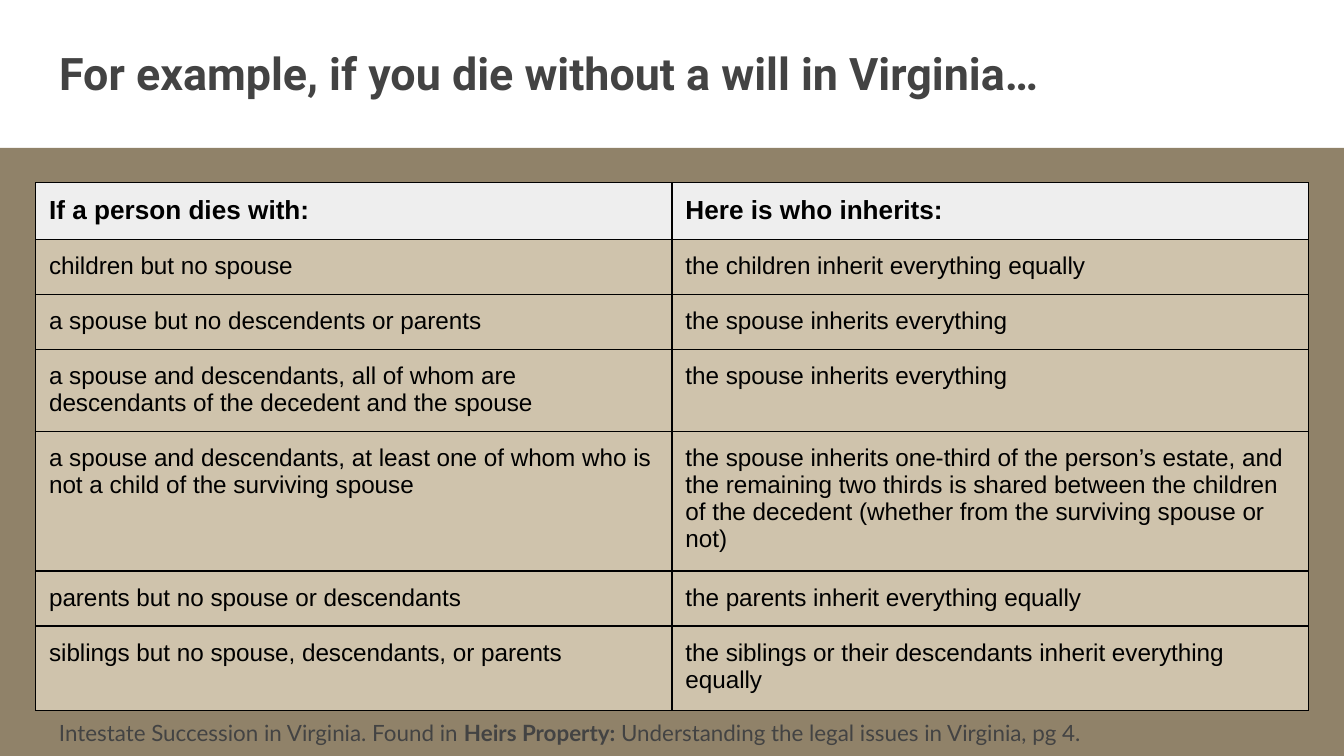
import pptx
import pptx.util
import pptx.dml.color
import pptx.enum.shapes
import pptx.enum.text
import pptx.oxml
import pptx.oxml.ns

WIDTH = 10
HEIGHT = WIDTH * 9 / 16
COLORS = {
    "band": "908269",
    "heading": "434343",
    "header": "EEEEEE",
    "body": "CFC3AC",
    "ink": "000000",
}
ROW_HEIGHTS = [0.42, 0.41, 0.41, 0.61, 1.04, 0.41, 0.63]
RULES = [
    ("If a person dies with:", "Here is who inherits:"),
    ("children but no spouse", "the children inherit everything equally"),
    ("a spouse but no descendents or parents", "the spouse inherits everything"),
    ("a spouse and descendants, all of whom are descendants of the decedent and the spouse",
     "the spouse inherits everything"),
    ("a spouse and descendants, at least one of whom who is not a child of the surviving spouse",
     "the spouse inherits one-third of the person’s estate, and the remaining two thirds is shared "
     "between the children of the decedent (whether from the surviving spouse or not)"),
    ("parents but no spouse or descendants", "the parents inherit everything equally"),
    ("siblings but no spouse, descendants, or parents",
     "the siblings or their descendants inherit everything equally"),
]
SOURCE = [
    ("Intestate Succession in Virginia. Found in ", False),
    ("Heirs Property: ", True),
    ("Understanding the legal issues in Virginia, pg 4.", False),
]


def rgb(name):
    return pptx.dml.color.RGBColor.from_string(COLORS[name])


def inches(box):
    return [pptx.util.Inches(v) for v in box]


def add_run(p, text, font, size, color, bold=False):
    r = p.add_run()
    r.text = text
    r.font.name = font
    r.font.size = pptx.util.Pt(size)
    r.font.bold = bold
    r.font.color.rgb = rgb(color)


def set_margins(frame):
    for side in ("left", "top", "right", "bottom"):
        setattr(frame, f"margin_{side}", pptx.util.Inches(0.1))


def set_frame(tf):
    set_margins(tf)
    tf.word_wrap = True
    tf.auto_size = pptx.enum.text.MSO_AUTO_SIZE.NONE
    tf.vertical_anchor = pptx.enum.text.MSO_ANCHOR.TOP
    p = tf.paragraphs[0]
    p.alignment = pptx.enum.text.PP_ALIGN.LEFT
    return p


def set_borders(cell):
    tc_pr = cell._tc.get_or_add_tcPr()
    for i, side in enumerate(("lnL", "lnR", "lnT", "lnB")):
        tc_pr.insert(i, pptx.oxml.parse_xml(
            f'<a:{side} {pptx.oxml.ns.nsdecls("a")} w="9525"><a:solidFill>'
            f'<a:srgbClr val="{COLORS["ink"]}"/></a:solidFill></a:{side}>'))


def add_band(s, box):
    sp = s.shapes.add_shape(pptx.enum.shapes.MSO_SHAPE.RECTANGLE, *inches(box))
    sp.shadow.inherit = False
    sp.fill.solid()
    sp.fill.fore_color.rgb = rgb("band")
    sp.line.fill.background()


def add_title(s, box):
    sp = s.shapes.title
    sp.left, sp.top, sp.width, sp.height = inches(box)
    p = set_frame(sp.text_frame)
    add_run(p, "For example, if you die without a will in Virginia…", "Roboto", 24, "heading", True)


def add_rules_table(s, box):
    table = s.shapes.add_table(len(RULES), 2, *inches(box)).table
    table.horz_banding = False
    for column in table.columns:
        column.width = pptx.util.Inches(box[2] / 2)
    for i, (texts, height) in enumerate(zip(RULES, ROW_HEIGHTS)):
        table.rows[i].height = pptx.util.Inches(height)
        for j, text in enumerate(texts):
            cell = table.cell(i, j)
            set_margins(cell)
            cell.fill.solid()
            cell.fill.fore_color.rgb = rgb("body" if i else "header")
            set_borders(cell)
            add_run(cell.text_frame.paragraphs[0], text, "Arial", 13 if i else 14, "ink", i == 0)


def add_source(s, box):
    sp = s.shapes.add_textbox(*inches(box))
    p = set_frame(sp.text_frame)
    for text, bold in SOURCE:
        add_run(p, text, "Lato", 12, "heading", bold)


def main():
    prs = pptx.Presentation()
    prs.slide_width, prs.slide_height = inches((WIDTH, HEIGHT))
    s = prs.slides.add_slide(prs.slide_layouts[5])
    band_top, margin, table_width = 1.1, 0.34, 9.47
    add_band(s, (0, band_top, WIDTH, HEIGHT - band_top))
    add_title(s, (margin, 0.24, WIDTH - 2 * margin, 0.63))
    add_rules_table(s, ((WIDTH - table_width) / 2, 1.36, table_width, sum(ROW_HEIGHTS)))
    add_source(s, (margin, 5.25, 8.28, 0.21))
    prs.save("out.pptx")


if __name__ == "__main__":
    main()
